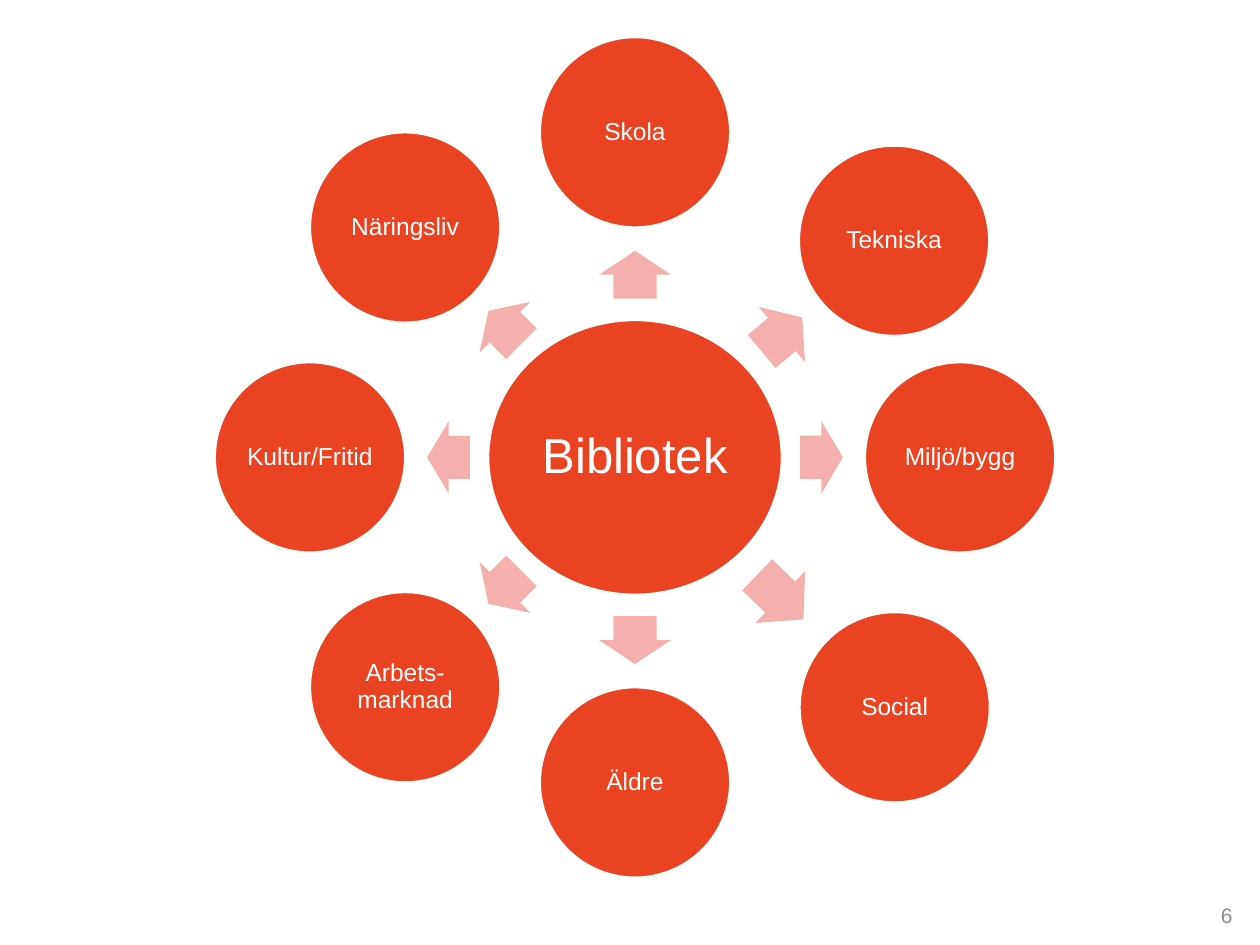
"""Build a slide with a library hub surrounded by eight municipal departments."""
from dataclasses import dataclass
from math import cos, radians, sin

from pptx import Presentation
from pptx.dml.color import RGBColor
from pptx.enum.shapes import MSO_SHAPE
from pptx.enum.text import MSO_ANCHOR, PP_ALIGN
from pptx.util import Inches, Pt

HUB = "Bibliotek"
PAGE_NUMBER = "6"
# label, angle clockwise from the right, circle distance, arrow distance, arrow length
DEPARTMENTS = [
    ("Skola", 270, 2.58, 1.45, 0.38),
    ("Tekniska", 320.1, 2.68, 1.52, 0.42),
    ("Miljö/bygg", 0, 2.58, 1.48, 0.34),
    ("Social", 43.9, 2.86, 1.6, 0.51),
    ("Äldre", 90, 2.58, 1.45, 0.38),
    ("Arbets-marknad", 135, 2.58, 1.46, 0.37),
    ("Kultur/Fritid", 180, 2.58, 1.48, 0.34),
    ("Näringsliv", 225, 2.58, 1.46, 0.37),
]
CENTER = (5.04, 3.63)
HUB_SIZE = (2.34, 2.19)
CIRCLE_SIZE = (1.52, 1.52)
ARROW_WIDTH = 0.57


@dataclass(frozen=True)
class Theme:
    font: str = "Arial"
    circle: RGBColor = RGBColor(0xEA, 0x43, 0x22)
    arrow: RGBColor = RGBColor(0xF3, 0xB0, 0xAC)
    white: RGBColor = RGBColor(0xFF, 0xFF, 0xFF)
    muted: RGBColor = RGBColor(0x8C, 0x8C, 0x8C)
    hub_size: int = 28
    label_size: int = 14
    number_size: int = 12


THEME = Theme()


def point_at(angle, distance):
    turn = radians(angle)
    return CENTER[0] + distance * cos(turn), CENTER[1] + distance * sin(turn)


def add_centered(shapes, kind, center, size, color):
    (x, y), (width, height) = center, size
    shape = shapes.add_shape(kind, Inches(x - width / 2), Inches(y - height / 2),
                             Inches(width), Inches(height))
    shape.shadow.inherit = False
    shape.fill.solid()
    shape.fill.fore_color.rgb = color
    return shape


def write(frame, text, size, color, align):
    frame.word_wrap = True
    frame.vertical_anchor = MSO_ANCHOR.MIDDLE
    paragraph = frame.paragraphs[0]
    paragraph.text = text
    paragraph.alignment = align
    paragraph.font.name = THEME.font
    paragraph.font.size = Pt(size)
    paragraph.font.color.rgb = color
    return paragraph


def add_circle(shapes, text, center, size, text_size, inset):
    circle = add_centered(shapes, MSO_SHAPE.OVAL, center, size, THEME.circle)
    circle.line.color.rgb = THEME.white
    circle.line.width = Pt(2)
    frame = circle.text_frame
    frame.margin_left = frame.margin_right = Inches(inset)
    frame.margin_top = frame.margin_bottom = Inches(inset)
    label = write(frame, text, text_size, THEME.white, PP_ALIGN.CENTER)
    label.line_spacing = 0.9


def add_arrow(shapes, center, length, angle):
    arrow = add_centered(shapes, MSO_SHAPE.RIGHT_ARROW, center,
                         (length, ARROW_WIDTH), THEME.arrow)
    arrow.line.fill.background()
    arrow.adjustments[0] = 0.6
    arrow.adjustments[1] = 0.5
    arrow.rotation = angle


def main():
    presentation = Presentation()
    presentation.slide_width = Inches(10)
    presentation.slide_height = Inches(7.5)
    slide = presentation.slides.add_slide(presentation.slide_layouts[6])

    number = slide.shapes.add_textbox(Inches(7.55), Inches(7.06), Inches(2.33), Inches(0.4))
    write(number.text_frame, PAGE_NUMBER, THEME.number_size, THEME.muted, PP_ALIGN.RIGHT)

    diagram = slide.shapes.add_group_shape().shapes
    add_circle(diagram, HUB, CENTER, HUB_SIZE, THEME.hub_size, 0.04)
    for label, angle, distance, arrow_distance, arrow_length in DEPARTMENTS:
        add_arrow(diagram, point_at(angle, arrow_distance), arrow_length, angle)
        add_circle(diagram, label, point_at(angle, distance), CIRCLE_SIZE,
                   THEME.label_size, 0.02)

    presentation.save("out.pptx")


if __name__ == "__main__":
    main()
